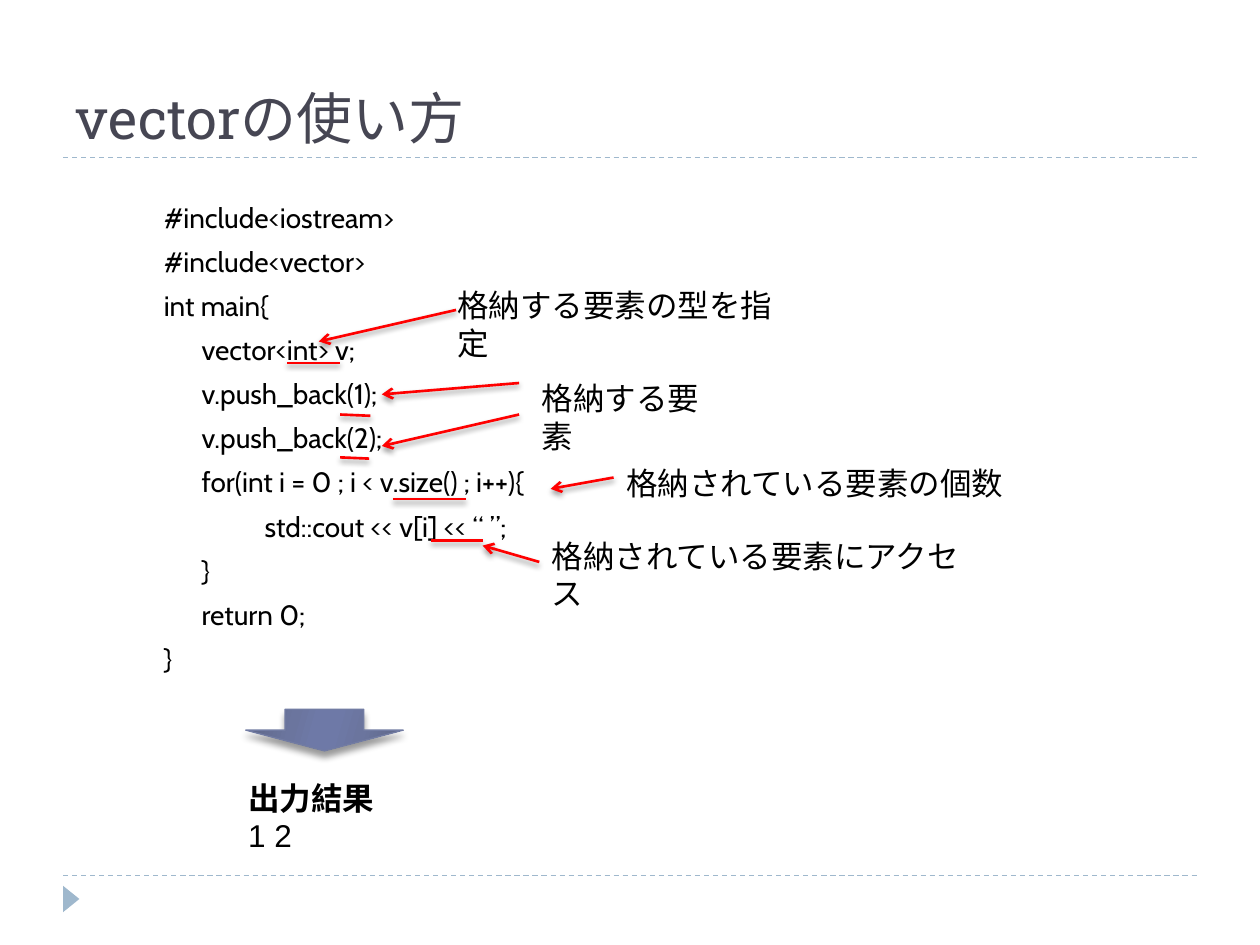
from lxml.etree import SubElement
from pptx import Presentation
from pptx.dml.color import RGBColor
from pptx.enum.dml import MSO_LINE
from pptx.enum.shapes import MSO_CONNECTOR, MSO_SHAPE
from pptx.enum.text import MSO_ANCHOR, MSO_AUTO_SIZE, PP_ALIGN
from pptx.oxml.ns import qn
from pptx.util import Inches, Pt

BLACK = RGBColor(0x00, 0x00, 0x00)
RED = RGBColor(0xFF, 0x00, 0x00)
TITLE_GRAY = RGBColor(0x46, 0x46, 0x53)
PALE_BLUE = RGBColor(0x9F, 0xB8, 0xCD)
ARROW_EDGE = RGBColor(0x72, 0x7C, 0xA3)
ARROW_DARK = RGBColor(0x5D, 0x65, 0x85)
ARROW_MIDDLE = RGBColor(0x6B, 0x75, 0x9E)
ARROW_LIGHT = RGBColor(0x6E, 0x79, 0xA7)
ARROW_STOPS = [(0, ARROW_DARK), (30, ARROW_MIDDLE), (45, ARROW_LIGHT),
               (55, ARROW_LIGHT), (73, ARROW_MIDDLE), (100, ARROW_DARK)]

CODE = [
    "#include<iostream>",
    "#include<vector>",
    "int main{",
    "\tvector<int> v;",
    "\tv.push_back(1);",
    "\tv.push_back(2);",
    "\tfor(int i = 0 ; i < v.size() ; i++){",
    "\t\tstd::cout << v[i] << “ ”;",
    "\t}",
    "\treturn 0;",
    "}",
]
LABELS = [
    ("格納する要素の型を指定", 3.53, 2.22, 2.9),
    ("格納する要素", 4.2, 2.96, 1.67),
    ("格納されている要素の個数", 4.87, 3.63, 3.22),
    ("格納されている要素にアクセス", 4.28, 4.21, 3.46),
]
UNDERLINES = [
    (2.28, 2.88, 2.7, 2.88),
    (2.7, 3.29, 2.94, 3.3),
    (2.7, 3.63, 2.93, 3.64),
    (3.12, 3.96, 3.7, 3.96),
    (3.42, 4.29, 3.83, 4.29),
]
POINTERS = [
    (3.62, 2.46, 2.53, 2.71),
    (4.12, 3.04, 3.03, 3.13),
    (4.12, 3.29, 3.03, 3.54),
    (4.87, 3.79, 4.37, 3.88),
    (4.28, 4.46, 3.83, 4.33),
]


def place(shape, left, top, width, height):
    shape.left, shape.top = Inches(left), Inches(top)
    shape.width, shape.height = Inches(width), Inches(height)


def format_runs(para, font_name, size, color, bold=False):
    for span in para.runs:
        span.font.name = font_name
        span.font.size = Pt(size)
        span.font.color.rgb = color
        span.font.bold = bold


def set_shadow(shape, blur=None, distance=None):
    effects = SubElement(shape._element.spPr, qn("a:effectLst"))
    if blur is None:
        return
    shadow = SubElement(effects, qn("a:outerShdw"), blurRad=str(Pt(blur)),
                        dist=str(Pt(distance)), dir="5400000", rotWithShape="0")
    color = SubElement(shadow, qn("a:srgbClr"), val=str(BLACK))
    SubElement(color, qn("a:alpha"), val="40000")


def add_line(page, ends, color, width):
    line = page.shapes.add_connector(MSO_CONNECTOR.STRAIGHT, *map(Inches, ends))
    line.line.color.rgb = color
    line.line.width = Pt(width)
    return line


def add_rule(page, top):
    rule = add_line(page, (0.5, top, 9.5, top), PALE_BLUE, 0.75)
    rule.line.dash_style = MSO_LINE.DASH
    set_shadow(rule)


def add_mark(page, ends, pointing):
    mark = add_line(page, ends, RED, 1.5)
    if pointing:
        SubElement(mark.line._get_or_add_ln(), qn("a:tailEnd"), type="arrow")
    set_shadow(mark, 3, 2)


def add_page_marker(page):
    marker = page.shapes.add_shape(MSO_SHAPE.ISOSCELES_TRIANGLE, 0, 0, 0, 0)
    place(marker, 0.46, 7.07, 0.21, 0.13)
    marker.rotation = 90
    marker.fill.solid()
    marker.fill.fore_color.rgb = PALE_BLUE
    marker.line.fill.background()
    marker.shadow.inherit = False


def add_down_arrow(page):
    arrow = page.shapes.add_shape(MSO_SHAPE.DOWN_ARROW, 0, 0, 0, 0)
    place(arrow, 1.95, 5.63, 1.25, 0.33)
    arrow.fill.gradient()
    arrow.fill.gradient_angle = 344
    stops = arrow._element.spPr.find(qn("a:gradFill")).find(qn("a:gsLst"))
    stops.clear()
    for share, color in ARROW_STOPS:
        stop = SubElement(stops, qn("a:gs"), pos=str(share * 1000))
        SubElement(stop, qn("a:srgbClr"), val=str(color))
    arrow.line.color.rgb = ARROW_EDGE
    arrow.line.width = Pt(0.75)
    set_shadow(arrow, 4, 3.4)


def fill_title(page, text):
    title = page.shapes.title
    place(title, 0.5, 0.17, 9, 1.08)
    frame = title.text_frame
    frame.text = text
    frame.auto_size = MSO_AUTO_SIZE.NONE
    frame.vertical_anchor = MSO_ANCHOR.BOTTOM
    para = frame.paragraphs[0]
    para.alignment = PP_ALIGN.LEFT
    format_runs(para, "Roboto Slab", 32, TITLE_GRAY)


def fill_code(page, lines):
    body = page.placeholders[1]
    place(body, 1.2, 1.54, 3.5, 4.25)
    frame = body.text_frame
    frame.text = "\n".join(lines)
    frame.auto_size = MSO_AUTO_SIZE.NONE
    for para in frame.paragraphs:
        para.space_before = Pt(6)
        properties = para._p.get_or_add_pPr()
        properties.set("marL", str(Inches(0.3)))
        properties.set("indent", str(Inches(-0.3)))
        SubElement(properties, qn("a:buNone"))
        format_runs(para, "Cabin", 16, BLACK)


def add_text(page, text, left, top, width, height=0.4):
    box = page.shapes.add_textbox(0, 0, 0, 0)
    place(box, left, top, width, height)
    frame = box.text_frame
    frame.word_wrap = True
    frame.text = text
    for para in frame.paragraphs:
        format_runs(para, "Arial", 18, BLACK)
    return box


def main():
    deck = Presentation()
    deck.slide_width, deck.slide_height = Inches(10), Inches(7.5)
    page = deck.slides.add_slide(deck.slide_layouts[1])
    for top in (1.25, 6.95):
        add_rule(page, top)
    add_page_marker(page)
    fill_title(page, "vectorの使い方")
    fill_code(page, CODE)
    result = add_text(page, "出力結果\n1 2", 1.87, 6.13, 1.21, 0.71)
    format_runs(result.text_frame.paragraphs[0], "Arial", 18, BLACK, bold=True)
    add_down_arrow(page)
    for ends in UNDERLINES:
        add_mark(page, ends, pointing=False)
    for ends in POINTERS:
        add_mark(page, ends, pointing=True)
    for label in LABELS:
        add_text(page, *label)
    deck.save("out.pptx")


if __name__ == "__main__":
    main()
